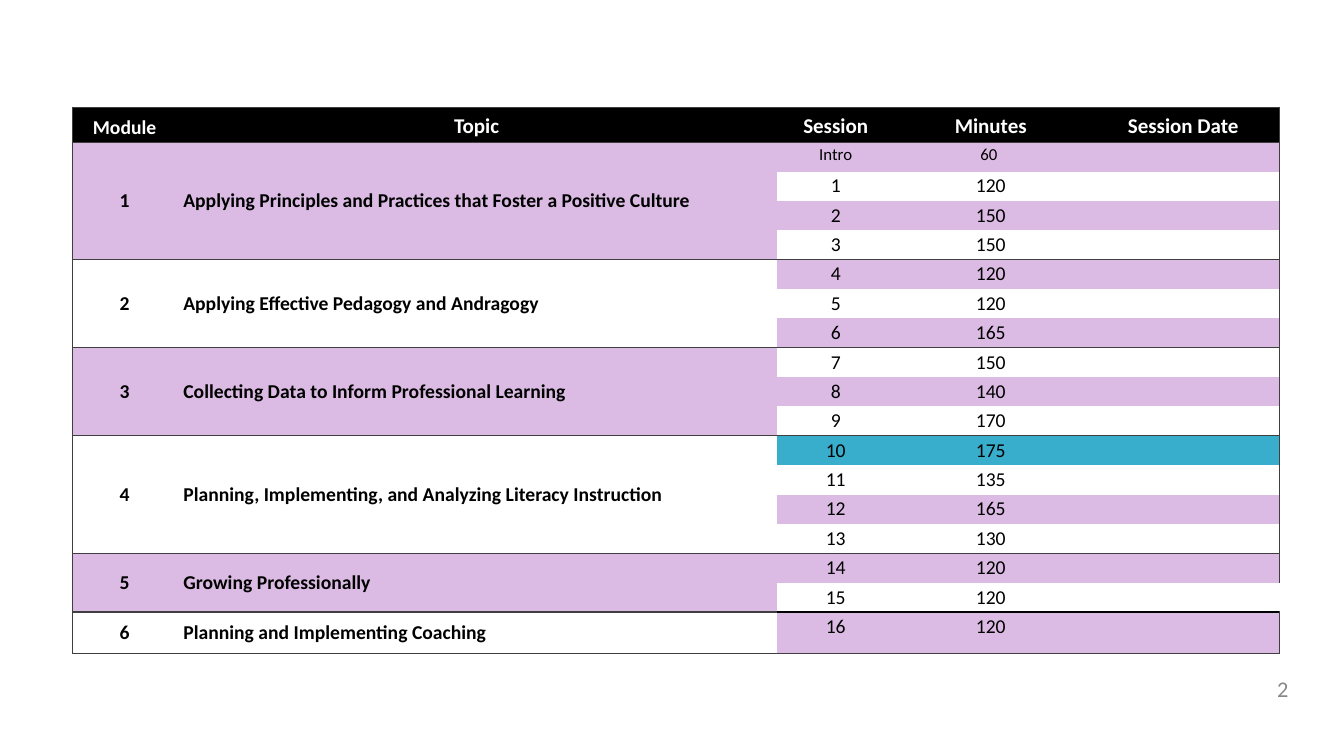
"""Build the course schedule slide: modules, sessions and minutes."""
from lxml import etree
from pptx import Presentation
from pptx.dml.color import RGBColor
from pptx.enum.text import MSO_ANCHOR, PP_ALIGN
from pptx.oxml.ns import qn
from pptx.util import Pt

LEFT, CENTER, RIGHT = PP_ALIGN.LEFT, PP_ALIGN.CENTER, PP_ALIGN.RIGHT
TOP, MIDDLE, BOTTOM = MSO_ANCHOR.TOP, MSO_ANCHOR.MIDDLE, MSO_ANCHOR.BOTTOM

BLACK = RGBColor(0x00, 0x00, 0x00)
WHITE = RGBColor(0xFF, 0xFF, 0xFF)
LILAC = RGBColor(0xDB, 0xBB, 0xE3)
TEAL = RGBColor(0x38, 0xAE, 0xCC)
EDGE = RGBColor(0x3F, 0x3F, 0x3F)
GREY = RGBColor(0x88, 0x88, 0x88)
FONT = "Calibri"

HEADINGS = ["Module", "Topic", "Session", "Minutes", "Session Date"]
MODULES = [
    ("Applying Principles and Practices that Foster a Positive Culture",
     [("Intro", "60 "), ("1", "120"), ("2", "150"), ("3", "150")]),
    ("Applying Effective Pedagogy and Andragogy",
     [("4", "120"), ("5", "120"), ("6", "165")]),
    ("Collecting Data to Inform Professional Learning",
     [("7", "150"), ("8", "140"), ("9", "170")]),
    ("Planning, Implementing, and Analyzing Literacy Instruction",
     [("10", "175"), ("11", "135"), ("12", "165"), ("13", "130")]),
    ("Growing Professionally", [("14", "120"), ("15", "120")]),
    ("Planning and Implementing Coaching", [("16", "120")]),
]
HIGHLIGHTED = "10"
OPEN_RIGHT = "15"

SLIDE_SIZE = (960, 540)
TABLE_LEFT, TABLE_TOP = 52, 76.6
COLUMN_WIDTHS = [74, 429, 84, 137.5, 137.5]
HEADER_HEIGHT, SESSION_HEIGHT, LAST_HEIGHT = 25, 21, 29.5
LAST_COLUMN = len(HEADINGS) - 1


def set_borders(cell, edges):
    """Draw the sides named in edges and leave the others bare."""
    properties = cell._tc.get_or_add_tcPr()
    for place, side in enumerate("LRTB"):
        line = etree.Element(qn(f"a:ln{side}"), w=str(Pt(1)))
        if side in edges:
            solid = etree.SubElement(line, qn("a:solidFill"))
            etree.SubElement(solid, qn("a:srgbClr"), val=str(edges[side]))
        else:
            etree.SubElement(line, qn("a:noFill"))
        properties.insert(place, line)


def fill_cell(cell, text, fill, edges, size=14, bold=False, color=BLACK,
              align=CENTER, anchor=TOP, margins=(4.5, 1.9)):
    """Write and format one table cell."""
    side, end = margins
    cell.margin_left = cell.margin_right = Pt(side)
    cell.margin_top = cell.margin_bottom = Pt(end)
    cell.vertical_anchor = anchor
    cell.fill.solid()
    cell.fill.fore_color.rgb = fill
    set_borders(cell, edges)
    cell.text_frame.text = text
    para = cell.text_frame.paragraphs[0]
    para.alignment = align
    for span in para.runs:
        format_font(span.font, size, color, bold)
    if not text:
        etree.SubElement(para._p, qn("a:endParaRPr"), sz=str(size * 100))


def format_font(font, size, color, bold=False):
    """Set the look of one run."""
    font.name, font.size, font.bold = FONT, Pt(size), bold
    font.color.rgb = color


def fill_header(table):
    """Write the heading row."""
    for column, heading in enumerate(HEADINGS):
        edges = {"T": EDGE, "B": EDGE}
        if column == 0:
            edges["L"] = EDGE
        if column == LAST_COLUMN:
            edges["R"] = EDGE
        fill_cell(table.cell(0, column), heading, BLACK, edges,
                  size=14 if column == 0 else 15, bold=True, color=WHITE,
                  anchor=BOTTOM)


def fill_module(table, number, topic, first, last):
    """Write the merged module number and topic cells."""
    fill = LILAC if number % 2 else WHITE
    for row in range(first, last + 1):
        edges = {"B": EDGE} if row in (first, last) else {}
        if row == first:
            edges["T"] = EDGE
        number_text, topic_text = (str(number), topic) if row == first else ("", "")
        fill_cell(table.cell(row, 0), number_text, fill, {**edges, "L": EDGE},
                  bold=True, anchor=MIDDLE, margins=(5, 0))
        fill_cell(table.cell(row, 1), topic_text, fill, edges, bold=True,
                  align=LEFT, anchor=MIDDLE, margins=(5, 1.9))
    if last > first:
        for column in (0, 1):
            table.cell(first, column).merge(table.cell(last, column))


def fill_session(table, row, session, minutes, first, last):
    """Write the session, minutes and empty date cells of one row."""
    fill = TEAL if session == HIGHLIGHTED else LILAC if row % 2 else WHITE
    edges = {}
    if row == first:
        edges["T"] = BLACK if session == "16" else EDGE
    if row == last:
        edges["B"] = BLACK if session == OPEN_RIGHT else EDGE
    for column, text in enumerate((session, minutes, ""), start=2):
        if column == LAST_COLUMN and session != OPEN_RIGHT:
            edges["R"] = EDGE
        fill_cell(table.cell(row, column), text, fill, edges,
                  size=12 if session == "Intro" else 14)


def add_schedule(page):
    """Add the table with all modules."""
    session_count = sum(len(sessions) for _, sessions in MODULES)
    heights = [HEADER_HEIGHT] + [SESSION_HEIGHT] * (session_count - 1) + [LAST_HEIGHT]
    table = page.shapes.add_table(
        len(heights), len(COLUMN_WIDTHS), Pt(TABLE_LEFT), Pt(TABLE_TOP),
        Pt(sum(COLUMN_WIDTHS)), Pt(sum(heights))).table
    table.horz_banding = table.first_row = False
    for column, width in zip(table.columns, COLUMN_WIDTHS):
        column.width = Pt(width)
    for row, height in zip(table.rows, heights):
        row.height = Pt(height)
    fill_header(table)
    first = 1
    for number, (topic, sessions) in enumerate(MODULES, start=1):
        last = first + len(sessions) - 1
        fill_module(table, number, topic, first, last)
        for row, (session, minutes) in enumerate(sessions, start=first):
            fill_session(table, row, session, minutes, first, last)
        first = last + 1


def add_page_number(page):
    """Add the page number at the lower right."""
    box = page.shapes.add_textbox(Pt(759.6), Pt(481), Pt(167.8), Pt(21.6))
    frame = box.text_frame
    frame.word_wrap = True
    frame.vertical_anchor = MIDDLE
    frame.text = "2"
    para = frame.paragraphs[0]
    para.alignment = RIGHT
    format_font(para.runs[0].font, 16, GREY)


def main():
    """Build and save the deck."""
    deck = Presentation()
    deck.slide_width, deck.slide_height = (Pt(length) for length in SLIDE_SIZE)
    page = deck.slides.add_slide(deck.slide_layouts[6])
    add_schedule(page)
    add_page_number(page)
    deck.save("out.pptx")


if __name__ == "__main__":
    main()
